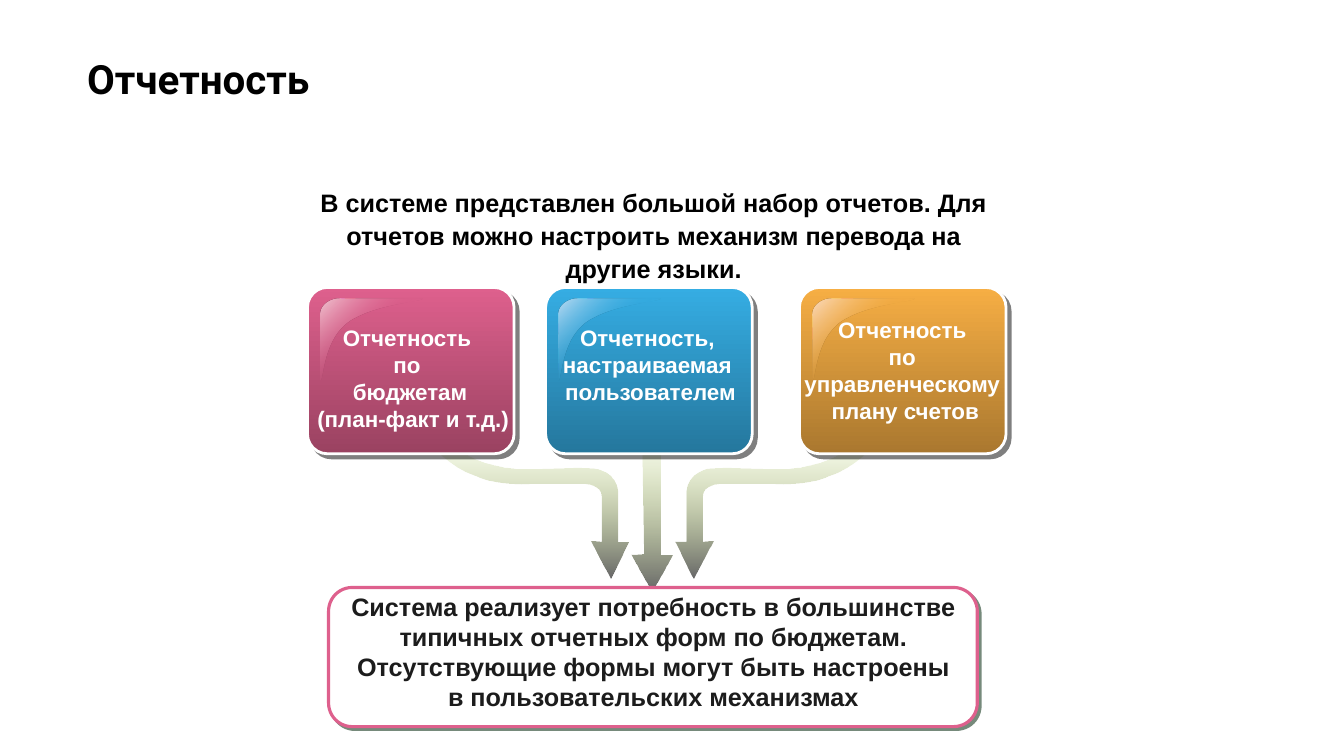
"""Build the slide about reporting: three report kinds that lead to one conclusion."""
from dataclasses import dataclass

from lxml import etree
from pptx import Presentation
from pptx import util as u
from pptx.dml.color import RGBColor
from pptx.enum import shapes, text
from pptx.oxml.ns import qn

Outline = list[tuple[float, ...]]
Stop = tuple[int, str, int]

MIRROR_AXIS = 465.9
CARD_TOP, CARD_WIDTH, CARD_HEIGHT = 205.3, 147.6, 118.8
ARROW_STOPS = [(0, "99CC00", 0), (100, "000000", 60)]
SIDE_ARROW = [
    (300.2, 304.6),
    (300.2, 304.6, 317.5, 348.5, 378, 345.6),
    (397.4, 345.6, 417.6, 345.6, 417.6, 345.6),
    (417.6, 345.6, 429.6, 345.6, 429.6, 355),
    (429.6, 370.8, 429.6, 386.6, 429.6, 386.6),
    (421.6, 385.9), (436, 413.3), (449, 386.6), (441.1, 386.6),
    (441.1, 386.6, 441.1, 368.6, 441.1, 350.6),
    (439.9, 337, 425.5, 334.8, 425.5, 334.8),
    (413.3, 332.6, 396, 335.5, 367.9, 334.8),
    (322.6, 330.5, 313.9, 304.6, 313.9, 304.6),
    (300.2, 304.6),
]
MIDDLE_ARROW = [
    (458.6, 299.5), (460.1, 395.3), (451.4, 396), (465.8, 422.6),
    (480.2, 396), (471.6, 396), (471.6, 299.5), (458.6, 299.5),
]
SHINE = [
    (23.8, 7.9),
    (15.8, 7.9, 9.4, 13, 9.4, 19.4),
    (9.4, 66.2),
    (12.2, 67, 10.8, 38.9, 28.8, 25.2),
    (47.5, 11.5, 82.8, 10.8, 82.1, 7.9),
    (23.8, 7.9),
]


@dataclass
class Box:
    """Position and size in points."""
    left: float
    top: float
    width: float
    height: float

    def emu(self) -> list[int]:
        """Return the four lengths for python-pptx."""
        return [u.Pt(n) for n in (self.left, self.top, self.width, self.height)]


@dataclass
class Card:
    """A coloured card with its label."""
    left: float
    light: str
    dark: str
    shine: str
    label: Box
    lines: list[str]


CARDS = [
    Card(219.6, "DE608D", "9A4261", "F0C7D2", Box(214.1, 228.2, 157.7, 85),
         ["Отчетность ", "по ", "бюджетам", " (план-факт и т.д.)"]),
    Card(389.7, "35ADE3", "25779D", "C1DCF2", Box(394.1, 228.2, 141.1, 65.5),
         ["Отчетность, ", "настраиваемая ", "пользователем"]),
    Card(571, "F6AE44", "AA782F", "FBDCC3", Box(566.4, 222.5, 160.6, 85),
         ["Отчетность ", "по ", "управленческому ", "плану счетов"]),
]


def color(code: str) -> RGBColor:
    """Turn a hex string into a colour."""
    return RGBColor.from_string(code)


def add_color(parent, code: str, alpha: int) -> None:
    """Append a colour with its opacity in percent."""
    tint = etree.SubElement(parent, qn("a:srgbClr"), val=code)
    if alpha < 100:
        etree.SubElement(tint, qn("a:alpha"), val=str(alpha * 1000))


def fill_gradient(shape, stops: list[Stop], angle: int) -> None:
    """Fill a shape with a linear gradient, angle clockwise."""
    shape.fill.gradient()
    shape.fill.gradient_angle = 360 - angle
    stop_list = shape.element.spPr.find(".//" + qn("a:gsLst"))
    for old in list(stop_list):
        stop_list.remove(old)
    for place, code, alpha in stops:
        add_color(etree.SubElement(stop_list, qn("a:gs"), pos=str(place * 1000)), code, alpha)


def add_shadow(shape, code: str, alpha: int, distance: float) -> None:
    """Give a shape a sharp shadow to the lower right."""
    shape.shadow.inherit = False
    effects = shape.element.spPr.find(qn("a:effectLst"))
    shadow = etree.SubElement(effects, qn("a:outerShdw"), blurRad="0",
                              dist=str(u.Pt(distance)), dir="2700000",
                              algn="ctr", rotWithShape="0")
    add_color(shadow, code, alpha)


def add_outline(parent, outline: Outline, stops: list[Stop], angle: int) -> None:
    """Draw a closed outline of lines and Bezier curves with a gradient."""
    ends = [(u.Pt(segment[-2]), u.Pt(segment[-1])) for segment in outline]
    builder = parent.shapes.build_freeform(*ends[0])
    builder.add_line_segments(ends[1:], close=True)
    shape = builder.convert_to_shape()
    left, top = min(x for x, _ in ends), min(y for _, y in ends)
    lines = shape.element.spPr.findall(".//" + qn("a:lnTo"))
    for line, segment in zip(lines, outline[1:]):
        if len(segment) == 6:
            curve = etree.Element(qn("a:cubicBezTo"))
            for x, y in zip(segment[::2], segment[1::2]):
                etree.SubElement(curve, qn("a:pt"), x=str(u.Pt(x) - left), y=str(u.Pt(y) - top))
            line.getparent().replace(line, curve)
    shape.shadow.inherit = False
    shape.line.fill.background()
    fill_gradient(shape, stops, angle)


def add_panel(parent, box: Box, corner: float, border: str, width: float):
    """Draw a rounded rectangle with a border."""
    panel = parent.shapes.add_shape(shapes.MSO_SHAPE.ROUNDED_RECTANGLE, *box.emu())
    panel.adjustments[0] = corner
    panel.line.color.rgb = color(border)
    panel.line.width = u.Pt(width)
    return panel


def write(frame, lines: list[str], *, size: float, code: str, font: str = "Arial",
          align=text.PP_ALIGN.CENTER, spacing: float = 1.0, wrap: bool = True,
          fit=text.MSO_AUTO_SIZE.SHAPE_TO_FIT_TEXT) -> None:
    """Fill a text frame with bold paragraphs."""
    frame.word_wrap = wrap
    frame.auto_size = fit
    frame.vertical_anchor = text.MSO_ANCHOR.TOP
    for index, line in enumerate(lines):
        para = frame.add_paragraph() if index else frame.paragraphs[0]
        para.alignment = align
        para.line_spacing = spacing
        span = para.add_run()
        span.text = line
        span.font.name, span.font.size, span.font.bold = font, u.Pt(size), True
        span.font.color.rgb = color(code)


def add_card(page, card: Card) -> None:
    """Draw one card with its shine and label."""
    group = page.shapes.add_group_shape()
    panel = add_panel(group, Box(card.left, CARD_TOP, CARD_WIDTH, CARD_HEIGHT), 0.12, "FFFFFF", 2)
    fill_gradient(panel, [(0, card.light, 100), (100, card.dark, 100)], 90)
    add_shadow(panel, "000000", 50, 4.2)
    shine = [tuple(n + (CARD_TOP if i % 2 else card.left) for i, n in enumerate(segment))
             for segment in SHINE]
    add_outline(group, shine, [(0, card.shine, 100), (50, card.light, 0), (100, card.shine, 100)], 45)
    label = page.shapes.add_textbox(*card.label.emu())
    write(label.text_frame, card.lines, size=16, code="FFFFFF", wrap=False)


def main() -> None:
    """Build and save the deck."""
    deck = Presentation()
    deck.slide_width, deck.slide_height = u.Pt(960), u.Pt(540)
    page = deck.slides.add_slide(deck.slide_layouts[5])
    title = page.shapes.title
    title.left, title.top, title.width, title.height = Box(55, 38.9, 772.6, 45.4).emu()
    write(title.text_frame, ["Отчетность"], size=28.8, code="000000", font="Roboto",
          align=text.PP_ALIGN.LEFT, spacing=0.9, fit=text.MSO_AUTO_SIZE.NONE)

    right_arrow = [tuple(n if i % 2 else 2 * MIRROR_AXIS - n for i, n in enumerate(segment))
                   for segment in SIDE_ARROW]
    for arrow in (SIDE_ARROW, MIDDLE_ARROW, right_arrow):
        add_outline(page, arrow, ARROW_STOPS, 90)
    for card in CARDS:
        add_card(page, card)

    intro = page.shapes.add_textbox(*Box(212, 127.8, 509.8, 79.2).emu())
    write(intro.text_frame, ["В системе представлен большой набор отчетов. Для отчетов можно "
                             "настроить механизм перевода на другие языки."],
          size=18, code="000000", spacing=1.1)
    frame = add_panel(page, Box(234.7, 419.6, 463.4, 99.4), 0.17, "DE608D", 2.25)
    frame.fill.solid()
    frame.fill.fore_color.rgb = color("FFFFFF")
    add_shadow(frame, "768A7B", 100, 2.8)
    summary = page.shapes.add_textbox(*Box(241.4, 418.6, 450.7, 94.3).emu())
    write(summary.text_frame, ["Система реализует потребность в большинстве типичных отчетных форм "
                               "по бюджетам. Отсутствующие формы могут быть настроены "
                               "в пользовательских механизмах"], size=18, code="1C1C1C")
    deck.save("out.pptx")


if __name__ == "__main__":
    main()
